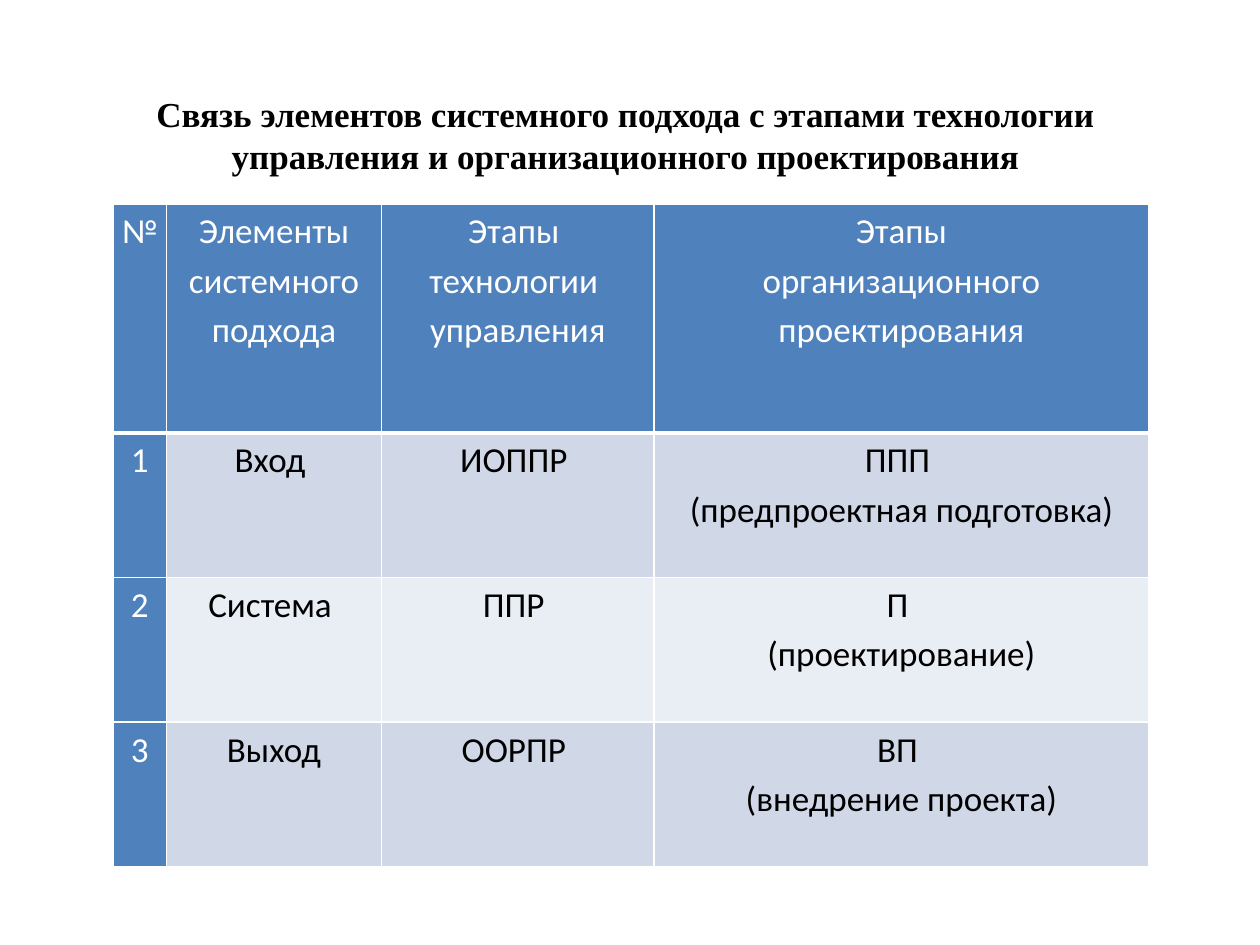
import pptx
import pptx.dml.color
import pptx.enum.text
import pptx.oxml
import pptx.oxml.ns
import pptx.util
from pptx.util import Inches

ALIGN = pptx.enum.text.PP_ALIGN
COLORS = {
    "head": "4F81BD",
    "band_odd": "D0D8E8",
    "band_even": "E9EDF4",
    "line": "FFFFFF",
    "light": "FFFFFF",
    "dark": "000000",
}
TITLE = ("Связь элементов системного подхода с этапами технологии "
         "управления и организационного проектирования")
ROWS = [
    ["№", "Элементы системного подхода", "Этапы \nтехнологии \nуправления",
     "Этапы\n организационного \nпроектирования"],
    ["1", "Вход ", "ИОППР ", "ППП \n(предпроектная подготовка)"],
    ["2", "Система ", "ППР ", "П \n(проектирование)"],
    ["3", "Выход", "ООРПР ", "ВП \n(внедрение проекта)"],
]
COLUMN_WIDTHS = [0.42, 1.71, 2.16, 3.93]
ROW_HEIGHTS = [1.82, 1.15, 1.15, 1.15]
CELL_FORMAT = {
    "margin_left": Inches(0.07),
    "margin_right": Inches(0.07),
    "margin_top": 0,
    "margin_bottom": 0,
}
TITLE_FORMAT = {
    "word_wrap": True,
    "vertical_anchor": pptx.enum.text.MSO_ANCHOR.MIDDLE,
    "auto_size": pptx.enum.text.MSO_AUTO_SIZE.NONE,
}


def apply_format(target, values):
    """Set each named attribute of the target."""
    for name, value in values.items():
        setattr(target, name, value)


def rgb(key):
    """Return the named palette colour."""
    return pptx.dml.color.RGBColor.from_string(COLORS[key])


def format_text(frame, color, align, font, spacing=None):
    """Format every paragraph of a text frame."""
    for paragraph in frame.paragraphs:
        apply_format(paragraph, {"alignment": align, "line_spacing": spacing})
        for run in paragraph.runs:
            apply_format(run.font, {"size": pptx.util.Pt(20), **font})
            run.font.color.rgb = rgb(color)


def add_borders(cell, bottom):
    """Draw solid cell borders, with the given bottom width in points."""
    properties = cell._tc.get_or_add_tcPr()
    for side, width in {"L": 1, "R": 1, "T": 1, "B": bottom}.items():
        properties.append(pptx.oxml.parse_xml(
            f'<a:ln{side} {pptx.oxml.ns.nsdecls("a")} w="{pptx.util.Pt(width)}">'
            f'<a:solidFill><a:srgbClr val="{COLORS["line"]}"/></a:solidFill>'
            f'</a:ln{side}>'))


def place_title(slide, left, top, width, height):
    """Place the slide title in the given box."""
    title = slide.shapes.title
    apply_format(title, {"left": left, "top": top, "width": width, "height": height})
    title.text_frame.text = TITLE
    apply_format(title.text_frame, TITLE_FORMAT)
    format_text(title.text_frame, "dark", ALIGN.CENTER,
                {"name": "Times New Roman", "bold": True})


def fill_cell(cell, text, row, column):
    """Write and style one cell according to its row and column."""
    is_head = row == 0 or column == 0
    band = "band_odd" if row % 2 else "band_even"
    cell.text = text
    apply_format(cell, CELL_FORMAT)
    add_borders(cell, 3 if row == 0 else 1)
    cell.fill.solid()
    cell.fill.fore_color.rgb = rgb("head" if is_head else band)
    align = ALIGN.JUSTIFY if row == column == 0 else ALIGN.CENTER
    format_text(cell.text_frame, "light" if is_head else "dark", align,
                {"name": "Calibri", "bold": False}, 1.15)


def place_stages_table(slide, left, top, width, height):
    """Place the table of system elements and stages in the given box."""
    stages = slide.shapes.add_table(
        len(ROWS), len(COLUMN_WIDTHS), left, top, width, height).table
    for column, share in zip(stages.columns, COLUMN_WIDTHS):
        column.width = int(width * share / sum(COLUMN_WIDTHS))
    for row, share in zip(stages.rows, ROW_HEIGHTS):
        row.height = int(height * share / sum(ROW_HEIGHTS))
    for row, texts in enumerate(ROWS):
        for column, text in enumerate(texts):
            fill_cell(stages.cell(row, column), text, row, column)


def main():
    """Build and save the slide."""
    deck = pptx.Presentation()
    apply_format(deck, {"slide_width": Inches(10), "slide_height": Inches(7.5)})
    slide = deck.slides.add_slide(deck.slide_layouts.get_by_name("Title Only"))
    place_title(slide, Inches(0.83), Inches(0.68), Inches(8.27), Inches(0.77))
    place_stages_table(slide, Inches(0.9), Inches(1.62), Inches(8.22), Inches(5.26))
    deck.save("out.pptx")


if __name__ == "__main__":
    main()
